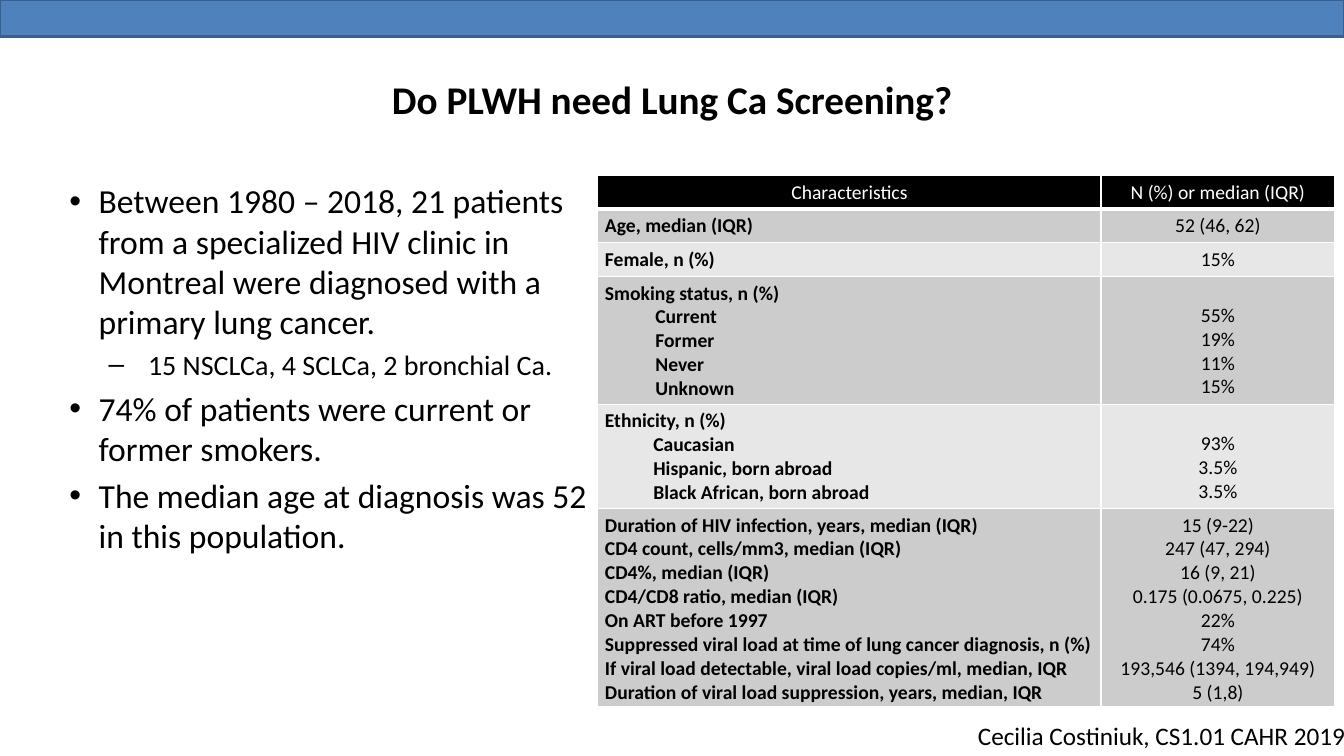
from pptx import Presentation
from pptx.dml.color import RGBColor
from pptx.enum import shapes, text
from pptx.oxml import parse_xml
from pptx.oxml.ns import nsdecls
from pptx.util import Inches, Pt

FONT = "Calibri"
COLORS = {"bar": "4F81BD", "bar_line": "3A5F8C", "black": "000000",
          "white": "FFFFFF", "dark_band": "CCCCCC", "light_band": "E7E7E7"}
BULLETS = [
    (0, "Between 1980 – 2018, 21 patients from a specialized HIV clinic in "
        "Montreal were diagnosed with a primary lung cancer."),
    (1, "15 NSCLCa, 4 SCLCa, 2 bronchial Ca."),
    (0, "74% of patients were current or former smokers."),
    (0, "The median age at diagnosis was 52 in this population."),
]
BULLET_LEVELS = [("•", 0.29, 0.29, 24), ("–", 0.78, 0.39, 20)]
HEADER = ("Characteristics", "N (%) or median (IQR)")
GROUPS = [
    (["Age, median (IQR)"], ["52 (46, 62)"], 0),
    (["Female, n (%)"], ["15%"], 0),
    (["Smoking status, n (%)", "Current", "Former", "Never", "Unknown"],
     ["55%", "19%", "11%", "15%"], 0.5),
    (["Ethnicity, n (%)", "Caucasian", "Hispanic, born abroad",
      "Black African, born abroad"], ["93%", "3.5%", "3.5%"], 0.48),
    (["Duration of HIV infection, years, median (IQR)",
      "CD4 count, cells/mm3, median (IQR)",
      "CD4%, median (IQR)",
      "CD4/CD8 ratio, median (IQR)",
      "On ART before 1997",
      "Suppressed viral load at time of lung cancer diagnosis, n (%)",
      "If viral load detectable, viral load copies/ml, median, IQR",
      "Duration of viral load suppression, years, median, IQR"],
     ["15 (9-22)", "247 (47, 294)", "16 (9, 21)", "0.175 (0.0675, 0.225)",
      "22%", "74%", "193,546 (1394, 194,949)", "5 (1,8)"], 0),
]


def color(name):
    return RGBColor.from_string(COLORS[name])


def style_paragraph(paragraph, size, tint="black", bold=False, align=text.PP_ALIGN.LEFT):
    paragraph.alignment = align
    for run in paragraph.runs:
        run.font.name = FONT
        run.font.size = Pt(size)
        run.font.bold = bold
        run.font.color.rgb = color(tint)


def set_indent(paragraph, left, hanging=0):
    properties = paragraph._p.get_or_add_pPr()
    properties.set("marL", str(Inches(left)))
    properties.set("indent", str(-Inches(hanging)))
    return properties


def add_bar(slide, width):
    bar = slide.shapes.add_shape(shapes.MSO_SHAPE.RECTANGLE, 0, 0, width, Inches(0.36))
    bar.shadow.inherit = False
    bar.fill.solid()
    bar.fill.fore_color.rgb = color("bar")
    bar.line.color.rgb = color("bar_line")
    bar.line.width = Pt(2)


def add_text(slide, box, content, wrap=True):
    shape = slide.shapes.add_textbox(*map(Inches, box))
    shape.text_frame.word_wrap = wrap
    shape.text_frame.text = content
    return shape.text_frame


def add_bullets(slide, box, items):
    frame = add_text(slide, box, "\n".join(content for _, content in items))
    for index, (paragraph, (level, _)) in enumerate(zip(frame.paragraphs, items)):
        mark, left, hanging, size = BULLET_LEVELS[level]
        paragraph.level = level
        if index:
            paragraph.space_before = Pt(size * 0.2)
        properties = set_indent(paragraph, left, hanging)
        properties.append(parse_xml(f'<a:buFont {nsdecls("a")} typeface="Arial"/>'))
        properties.append(parse_xml(f'<a:buChar {nsdecls("a")} char="{mark}"/>'))
        style_paragraph(paragraph, size)


def set_borders(cell, widths):
    properties = cell._tc.get_or_add_tcPr()
    for index, (side, width) in enumerate(zip("LRTB", widths)):
        properties.insert(index, parse_xml(
            f'<a:ln{side} {nsdecls("a")} w="{Pt(width)}"><a:solidFill>'
            f'<a:srgbClr val="{COLORS["white"]}"/></a:solidFill></a:ln{side}>'))


def fill_cell(cell, lines, fill, widths, **style):
    cell.text_frame.text = "\n".join(lines)
    cell.margin_left = cell.margin_right = Inches(0.07)
    cell.margin_top = cell.margin_bottom = Inches(0.05)
    cell.fill.solid()
    cell.fill.fore_color.rgb = color(fill)
    set_borders(cell, widths)
    for paragraph in cell.text_frame.paragraphs:
        style_paragraph(paragraph, 14, **style)


def add_characteristics(slide, left, top, column_widths):
    line_counts = [1] + [len(labels) for labels, _, _ in GROUPS]
    heights = [Inches(0.1 + 0.23 * count) for count in line_counts]
    table = slide.shapes.add_table(
        len(heights), 2, Inches(left), Inches(top),
        Inches(sum(column_widths)), sum(heights)).table
    table.first_row = table.horz_banding = False
    for column, width in zip(table.columns, column_widths):
        column.width = Inches(width)
    for row, height in zip(table.rows, heights):
        row.height = height
    center = text.PP_ALIGN.CENTER
    for index, title in enumerate(HEADER):
        fill_cell(table.cell(0, index), [title], "black", (1, 1, 1, 3),
                  tint="white", align=center)
    for row, (labels, values, indent) in enumerate(GROUPS, 1):
        fill = "dark_band" if row % 2 else "light_band"
        widths = (1, 1, 3 if row == 1 else 1, 1)
        label_cell, value_cell = table.cell(row, 0), table.cell(row, 1)
        fill_cell(label_cell, labels, fill, widths, bold=True)
        for paragraph in label_cell.text_frame.paragraphs[1:]:
            set_indent(paragraph, indent)
        fill_cell(value_cell, values, fill, widths, align=center)
        value_cell.vertical_anchor = text.MSO_ANCHOR.BOTTOM


def main():
    """Build the lung cancer screening slide."""
    presentation = Presentation()
    presentation.slide_width = Inches(13.33)
    presentation.slide_height = Inches(7.5)
    slide = presentation.slides.add_slide(presentation.slide_layouts[6])
    add_bar(slide, presentation.slide_width)
    title = add_text(slide, (0.26, 0.36, 12.81, 1.25), "Do PLWH need Lung Ca Screening?")
    title.vertical_anchor = text.MSO_ANCHOR.MIDDLE
    style_paragraph(title.paragraphs[0], 28, bold=True, align=text.PP_ALIGN.CENTER)
    add_bullets(slide, (0.59, 1.74, 5.34, 4.76), BULLETS)
    citation = add_text(slide, (9.6, 7.1, 3.89, 0.4),
                        "Cecilia Costiniuk, CS1.01 CAHR 2019", wrap=False)
    style_paragraph(citation.paragraphs[0], 18)
    add_characteristics(slide, 5.93, 1.74, (4.99, 2.32))
    presentation.save("out.pptx")


if __name__ == "__main__":
    main()
